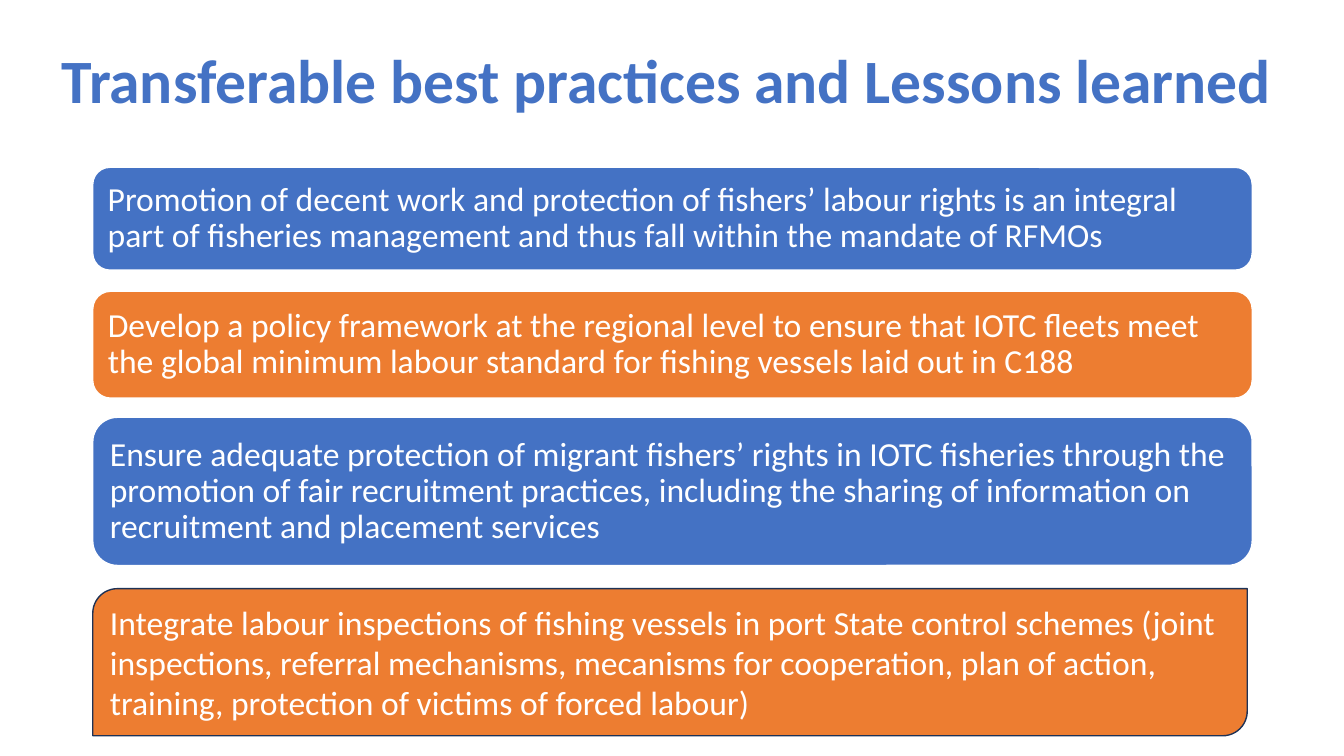
import pptx
import pptx.util
import pptx.dml.color
import pptx.enum.shapes
import pptx.enum.text

Inches, Pt = pptx.util.Inches, pptx.util.Pt
SHAPE = pptx.enum.shapes.MSO_SHAPE
ALIGN = pptx.enum.text.PP_ALIGN

COLORS = {"blue": "4472C4", "orange": "ED7D31", "white": "FFFFFF", "navy": "1E3256"}
FONT = "Calibri"

TITLE = "Transferable best practices and Lessons learned"
ROUND, DIAGONAL = SHAPE.ROUNDED_RECTANGLE, SHAPE.ROUND_2_DIAG_RECTANGLE
# text, preset, fill, outline, top, width, height, line spacing
LESSONS = [
    ("Promotion of decent work and protection of fishers’ labour rights is an integral "
     "part of fisheries management and thus fall within the mandate of RFMOs",
     ROUND, "blue", "white", 1.66, 11.5, 1.02, 0.9),
    ("Develop a policy framework at the regional level to ensure that IOTC fleets meet "
     "the global minimum labour standard for fishing vessels laid out in C188",
     ROUND, "orange", "white", 2.89, 11.5, 1.06, 0.9),
    ("Ensure adequate protection of migrant fishers’ rights in IOTC fisheries through the "
     "promotion of fair recruitment practices, including the sharing of information on "
     "recruitment and placement services",
     ROUND, "blue", "white", 4.14, 11.5, 1.47, 0.9),
    ("Integrate labour inspections of fishing vessels in port State control schemes (joint "
     "inspections, referral mechanisms, mecanisms for cooperation, plan of action, "
     "training, protection of victims of forced labour)",
     DIAGONAL, "orange", "navy", 5.84, 11.45, 1.46, 1.0),
]
LESSON_LEFT = 0.92


def rgb(name):
    return pptx.dml.color.RGBColor.from_string(COLORS[name])


def write(sp, text, *, size, color, bold=False, align=ALIGN.LEFT, spacing=1.0):
    tf = sp.text_frame
    tf.word_wrap = True
    tf.vertical_anchor = pptx.enum.text.MSO_ANCHOR.MIDDLE
    p = tf.paragraphs[0]
    p.alignment = align
    p.line_spacing = spacing
    r = p.add_run()
    r.text = text
    r.font.name = FONT
    r.font.size = Pt(size)
    r.font.bold = bold
    r.font.color.rgb = rgb(color)


def add_lesson(s, text, preset, fill, outline, top, width, height, spacing):
    sp = s.shapes.add_shape(preset, Inches(LESSON_LEFT), Inches(top),
                            Inches(width), Inches(height))
    sp.shadow.inherit = False
    sp.fill.solid()
    sp.fill.fore_color.rgb = rgb(fill)
    sp.line.color.rgb = rgb(outline)
    sp.line.width = Pt(1)
    write(sp, text, size=24, color="white", spacing=spacing)


def main():
    prs = pptx.Presentation()
    prs.slide_width, prs.slide_height = Inches(13.33), Inches(7.5)
    s = prs.slides.add_slide(prs.slide_layouts[6])
    title = s.shapes.add_textbox(Inches(0.38), Inches(0.1), Inches(12.48), Inches(1.46))
    write(title, TITLE, size=44, color="blue", bold=True, align=ALIGN.CENTER, spacing=0.9)
    for lesson in LESSONS:
        add_lesson(s, *lesson)
    prs.save("out.pptx")


if __name__ == "__main__":
    main()
